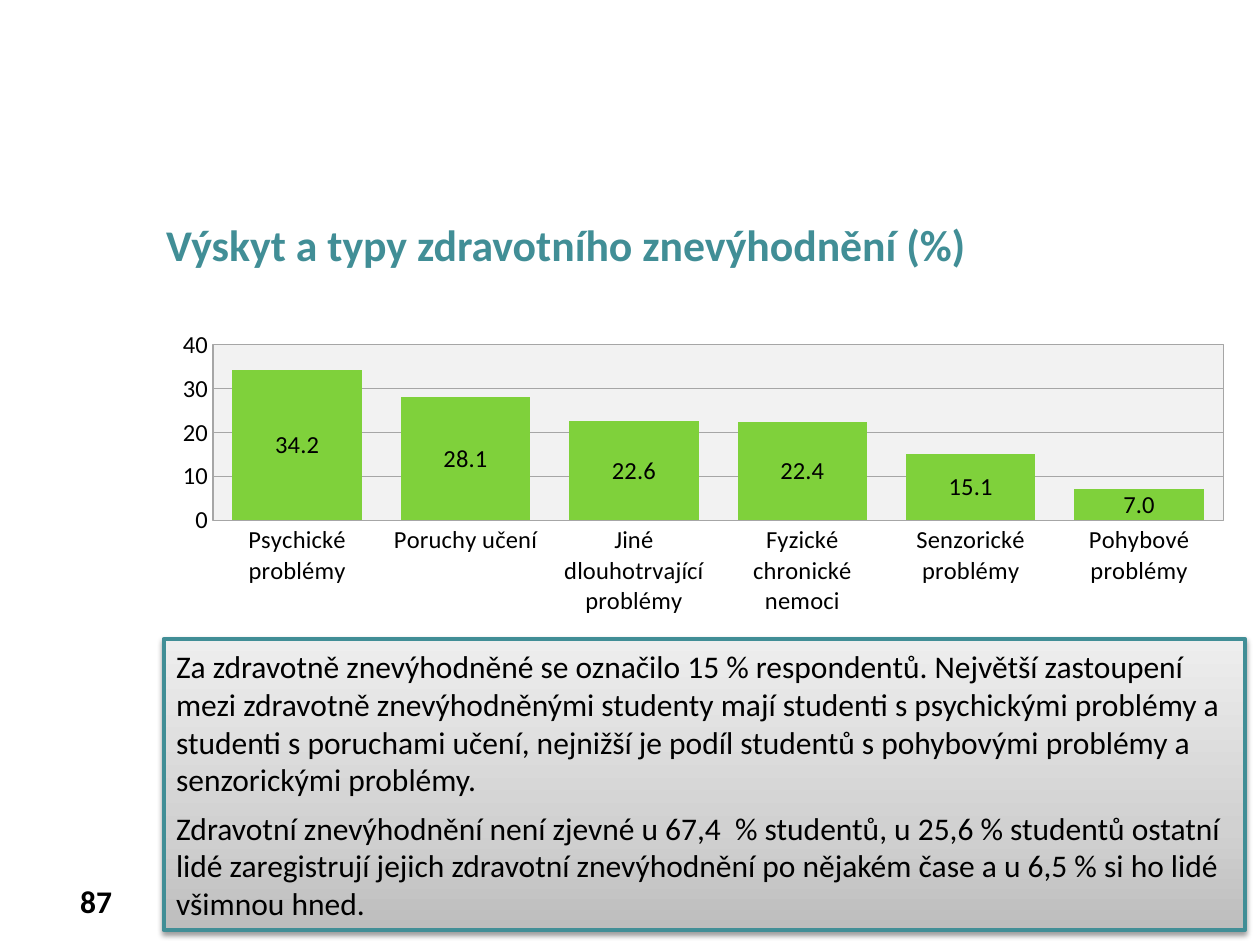
from dataclasses import dataclass

from lxml import etree
from pptx import Presentation
from pptx import util as u
from pptx.chart.data import CategoryChartData
from pptx.dml.color import RGBColor
from pptx.enum import chart as ch
from pptx.enum import shapes, text
from pptx.oxml import parse_xml
from pptx.oxml.ns import nsdecls, qn

TEAL = RGBColor(0x41, 0x8E, 0x96)
GREEN = RGBColor(0x7F, 0xD1, 0x3B)
GREY = RGBColor(0xA6, 0xA6, 0xA6)
BLACK = RGBColor(0x00, 0x00, 0x00)
FONT = "Calibri"

COMMENTARY = [
    "Za zdravotně znevýhodněné se označilo 15 % respondentů. Největší zastoupení "
    "mezi zdravotně znevýhodněnými studenty mají studenti s psychickými problémy "
    "a studenti s poruchami učení, nejnižší je podíl studentů s pohybovými "
    "problémy a senzorickými problémy.",
    "Zdravotní znevýhodnění není zjevné u 67,4  % studentů, u 25,6 % studentů "
    "ostatní lidé zaregistrují jejich zdravotní znevýhodnění po nějakém čase "
    "a u 6,5 % si ho lidé všimnou hned.",
]
SHARES = {
    "Psychické problémy": 34.2,
    "Poruchy učení": 28.1,
    "Jiné dlouhotrvající problémy": 22.6,
    "Fyzické chronické nemoci": 22.4,
    "Senzorické problémy": 15.1,
    "Pohybové problémy": 7.0,
}
GRADIENT = [(0, "BDBDBD"), (35, "D1D1D1"), (100, "EEEEEE")]


@dataclass
class Box:
    """Position and size in centimetres."""
    x: float
    y: float
    w: float
    h: float

    def lengths(self) -> tuple:
        return u.Cm(self.x), u.Cm(self.y), u.Cm(self.w), u.Cm(self.h)


@dataclass
class Label:
    text: str
    box: Box
    size: float
    color: RGBColor
    align: text.PP_ALIGN


LABELS = [
    Label("87", Box(0.71, 17.65, 1.8, 1.02), 18, BLACK, text.PP_ALIGN.RIGHT),
    Label("Výskyt a typy zdravotního znevýhodnění (%)",
          Box(3.1, 4.32, 22.6, 1.19), 25, TEAL, text.PP_ALIGN.LEFT),
]


def set_font(font, size: float, color: RGBColor, bold: bool = False) -> None:
    font.name, font.size, font.bold = FONT, u.Pt(size), bold
    font.color.rgb = color


def add_label(s, label: Label) -> None:
    tf = s.shapes.add_textbox(*label.box.lengths()).text_frame
    tf.word_wrap = True
    tf.vertical_anchor = text.MSO_ANCHOR.MIDDLE
    tf.text = label.text
    p = tf.paragraphs[0]
    p.alignment = label.align
    set_font(p.runs[0].font, label.size, label.color, bold=True)


def add_commentary(s, box: Box, paragraphs: list[str]) -> None:
    sp = s.shapes.add_shape(shapes.MSO_SHAPE.RECTANGLE, *box.lengths())
    sp.line.color.rgb = TEAL
    sp.line.width = u.Pt(2.25)

    # Gradient fill and soft shadow
    stops = "".join(f'<a:gs pos="{pos * 1000}"><a:srgbClr val="{color}"/></a:gs>'
                    for pos, color in GRADIENT)
    sp._element.spPr.find(qn("a:prstGeom")).addnext(parse_xml(
        f'<a:gradFill {nsdecls("a")} rotWithShape="1"><a:gsLst>{stops}</a:gsLst>'
        '<a:lin ang="16200000" scaled="0"/></a:gradFill>'))
    sp.shadow.inherit = False
    effects = sp._element.spPr.find(qn("a:effectLst"))
    effects.append(parse_xml(
        f'<a:outerShdw {nsdecls("a")} blurRad="{u.Pt(3.1)}" dist="{u.Pt(1.6)}" '
        'dir="5400000" rotWithShape="0"><a:srgbClr val="000000">'
        '<a:alpha val="38000"/></a:srgbClr></a:outerShdw>'))

    tf = sp.text_frame
    tf.word_wrap = True
    tf.vertical_anchor = text.MSO_ANCHOR.MIDDLE
    for i, words in enumerate(paragraphs):
        p = tf.add_paragraph() if i else tf.paragraphs[0]
        p.text = words
        p.alignment = text.PP_ALIGN.LEFT
        if i:
            p.space_before = u.Pt(6)
        set_font(p.runs[0].font, 18, BLACK)


def style_plot_area(chart) -> None:
    """Fix the inner plot rectangle and give it a pale, outlined background."""
    area = chart._chartSpace.chart.plotArea
    layout = area.find(qn("c:layout"))
    if layout is None:
        layout = etree.Element(qn("c:layout"))
        area.insert(0, layout)
    manual = etree.SubElement(layout, qn("c:manualLayout"))
    for tag, value in [("layoutTarget", "inner"), ("xMode", "edge"), ("yMode", "edge"),
                       ("x", 0.05), ("y", 0.07), ("w", 0.93), ("h", 0.59)]:
        etree.SubElement(manual, qn(f"c:{tag}")).set("val", str(value))
    area.append(parse_xml(
        f'<c:spPr {nsdecls("c", "a")}><a:solidFill><a:srgbClr val="F2F2F2"/></a:solidFill>'
        f'<a:ln w="{u.Pt(0.75)}"><a:solidFill><a:srgbClr val="{GREY}"/></a:solidFill>'
        '</a:ln></c:spPr>'))


def add_share_chart(s, box: Box, shares: dict[str, float]) -> None:
    data = CategoryChartData(number_format="0.0")
    data.categories = list(shares)
    data.add_series("Series 1", list(shares.values()))
    chart = s.shapes.add_chart(
        ch.XL_CHART_TYPE.COLUMN_CLUSTERED, *box.lengths(), data).chart
    chart.has_legend = chart.has_title = False
    set_font(chart.font, 14, BLACK)

    # Axes
    values = chart.value_axis
    values.minimum_scale, values.maximum_scale, values.major_unit = 0, 40, 10
    values.tick_labels.number_format = "0"
    values.tick_labels.number_format_is_linked = False
    for axis in (chart.category_axis, values):
        axis.major_tick_mark = axis.minor_tick_mark = ch.XL_TICK_MARK.NONE
    for line in (chart.category_axis.format.line, values.format.line,
                 values.major_gridlines.format.line):
        line.color.rgb = GREY
        line.width = u.Pt(0.75)

    # Columns and their values
    plot = chart.plots[0]
    plot.gap_width, plot.overlap = 30, -27
    plot.vary_by_categories = False
    fill = plot.series[0].format.fill
    fill.solid()
    fill.fore_color.rgb = GREEN
    labels = plot.series[0].data_labels
    labels.show_value = True
    labels.position = ch.XL_LABEL_POSITION.CENTER
    labels.number_format = "0.0"
    labels.number_format_is_linked = False
    set_font(labels.font, 14, BLACK)
    style_plot_area(chart)


def main() -> None:
    prs = Presentation()
    prs.slide_width, prs.slide_height = u.Cm(25.4), u.Cm(19.05)
    s = prs.slides.add_slide(prs.slide_layouts[6])

    # Page number and heading
    for label in LABELS:
        add_label(s, label)

    # Commentary and chart
    add_commentary(s, Box(3.3, 12.88, 21.8, 5.87), COMMENTARY)
    add_share_chart(s, Box(3.2, 6.53, 21.9, 6), SHARES)
    prs.save("out.pptx")


if __name__ == "__main__":
    main()
